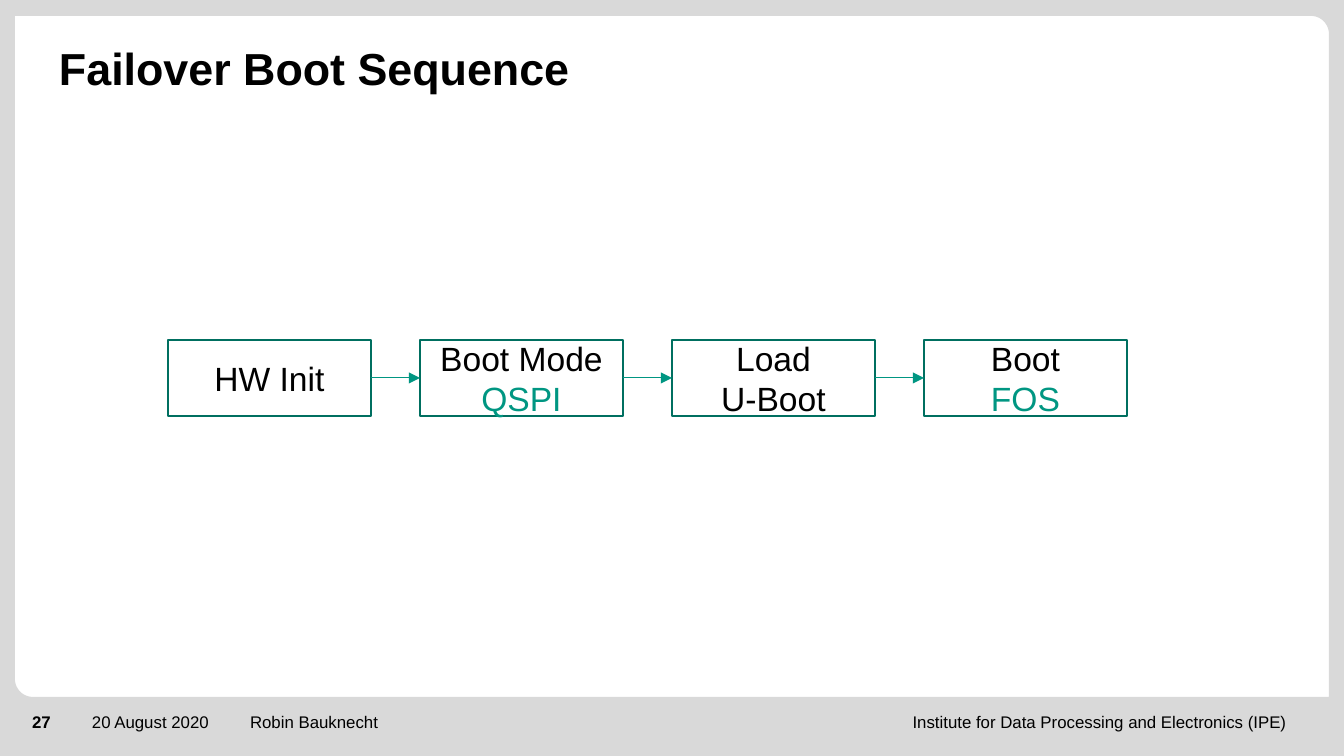
import math
from dataclasses import dataclass

import pptx
import pptx.dml.color
import pptx.enum.shapes
import pptx.enum.text
import pptx.oxml
import pptx.oxml.ns
import pptx.util

ALIGN = pptx.enum.text.PP_ALIGN
ANCHOR = pptx.enum.text.MSO_ANCHOR
SHAPE = pptx.enum.shapes.MSO_SHAPE
CONNECTOR = pptx.enum.shapes.MSO_CONNECTOR

EMU_PER_PX = 914400 / 134.4
SLIDE_WIDTH, SLIDE_HEIGHT = 1344, 756
FONT = "Arial"
COLORS = {
    "frame": "D9D9D9",
    "text": "000000",
    "accent": "009682",
    "border": "006F60",
}


@dataclass(frozen=True)
class Label:
    text: str
    left: int
    top: int
    width: int
    height: int
    size: int = 9
    bold: bool = False
    align: ALIGN = ALIGN.LEFT
    anchor: ANCHOR = ANCHOR.TOP
    line_spacing: float = 1.0


@dataclass(frozen=True)
class Line:
    text: str
    color: str = "text"


FOOTER_TOP = 712
LABELS = [
    Label("Robin Bauknecht", 250, FOOTER_TOP, 542, 40),
    Label("Institute for Data Processing and Electronics (IPE)",
          809, FOOTER_TOP, 477, 40, align=ALIGN.RIGHT),
    Label("20 August 2020", 92, FOOTER_TOP, 151, 40),
    Label("27", 32, FOOTER_TOP, 48, 32, bold=True),
    Label("Failover Boot Sequence", 59, 11, 1009, 84, size=24, bold=True,
          anchor=ANCHOR.BOTTOM, line_spacing=0.9),
]

STEPS = [
    [Line("HW Init")],
    [Line("Boot Mode"), Line("QSPI", "accent")],
    [Line("Load"), Line("U-Boot")],
    [Line("Boot"), Line("FOS", "accent")],
]
STEP_LEFT, STEP_TOP, STEP_PITCH = 168, 340, 252
STEP_WIDTH, STEP_HEIGHT = 203, 76
LEFT_SITE, RIGHT_SITE = 1, 3


def px(length: float) -> int:
    return round(length * EMU_PER_PX)


def rgb(name: str) -> pptx.dml.color.RGBColor:
    return pptx.dml.color.RGBColor.from_string(COLORS[name])


def set_font(para, size: int, color: str = "text", bold: bool = False) -> None:
    para.font.name = FONT
    para.font.size = pptx.util.Pt(size)
    para.font.bold = bold
    para.font.color.rgb = rgb(color)


def corner(center_x: int, center_y: int, radius: int, start: int) -> list:
    """Points of a quarter circle, turning anticlockwise on the page."""
    angles = [math.radians(start - step * 5) for step in range(19)]
    return [(px(center_x + radius * math.cos(angle)),
             px(center_y + radius * math.sin(angle))) for angle in angles]


def add_frame(page) -> None:
    left, top, right, bottom, radius = 15, 16, 1329, 697, 18
    opening = [
        (px(left), px(top)),
        *corner(left + radius, bottom - radius, radius, 180),
        (px(right), px(bottom)),
        *corner(right - radius, top + radius, radius, 0),
    ]
    width, height = px(SLIDE_WIDTH), px(SLIDE_HEIGHT)
    builder = page.shapes.build_freeform(0, 0)
    builder.add_line_segments([(width, 0), (width, height), (0, height)])
    builder.move_to(*opening[0])
    builder.add_line_segments(opening[1:])
    frame = builder.convert_to_shape()
    frame.shadow.inherit = False
    frame.fill.solid()
    frame.fill.fore_color.rgb = rgb("frame")
    frame.line.fill.background()


def add_label(page, label: Label) -> None:
    box = page.shapes.add_textbox(px(label.left), px(label.top),
                                  px(label.width), px(label.height))
    frame = box.text_frame
    frame.word_wrap = True
    frame.vertical_anchor = label.anchor
    frame.margin_left = frame.margin_right = 0
    frame.margin_top = frame.margin_bottom = 0
    para = frame.paragraphs[0]
    para.text = label.text
    para.alignment = label.align
    para.line_spacing = label.line_spacing
    set_font(para, label.size, bold=label.bold)


def add_step(page, index: int, lines: list[Line]):
    box = page.shapes.add_shape(
        SHAPE.FLOWCHART_PROCESS, px(STEP_LEFT + index * STEP_PITCH),
        px(STEP_TOP), px(STEP_WIDTH), px(STEP_HEIGHT))
    box.shadow.inherit = False
    box.fill.background()
    box.line.color.rgb = rgb("border")
    box.line.width = pptx.util.Pt(1)
    frame = box.text_frame
    frame.word_wrap = True
    frame.vertical_anchor = ANCHOR.MIDDLE
    for number, line in enumerate(lines):
        para = frame.add_paragraph() if number else frame.paragraphs[0]
        para.text = line.text
        para.alignment = ALIGN.CENTER
        set_font(para, 18, line.color)
    return box


def add_arrow(page, source, target) -> None:
    arrow = page.shapes.add_connector(CONNECTOR.STRAIGHT, 0, 0, 0, 0)
    arrow.begin_connect(source, RIGHT_SITE)
    arrow.end_connect(target, LEFT_SITE)
    arrow.line.color.rgb = rgb("accent")
    arrow.line.width = pptx.util.Pt(0.5)
    qualified = pptx.oxml.ns.qn
    properties = arrow.line._get_or_add_ln()
    head = properties.makeelement(qualified("a:tailEnd"), {"type": "triangle"})
    properties.append(head)
    shape_properties = properties.getparent()
    shape_properties.append(
        shape_properties.makeelement(qualified("a:effectLst"), {}))


def main() -> None:
    deck = pptx.Presentation()
    deck.slide_width, deck.slide_height = px(SLIDE_WIDTH), px(SLIDE_HEIGHT)
    page = deck.slides.add_slide(deck.slide_layouts[6])

    # Frame, footer and title
    add_frame(page)
    for label in LABELS:
        add_label(page, label)

    # Boot sequence
    boxes = [add_step(page, index, lines) for index, lines in enumerate(STEPS)]
    for source, target in zip(boxes, boxes[1:]):
        add_arrow(page, source, target)

    deck.save("out.pptx")


if __name__ == "__main__":
    main()
